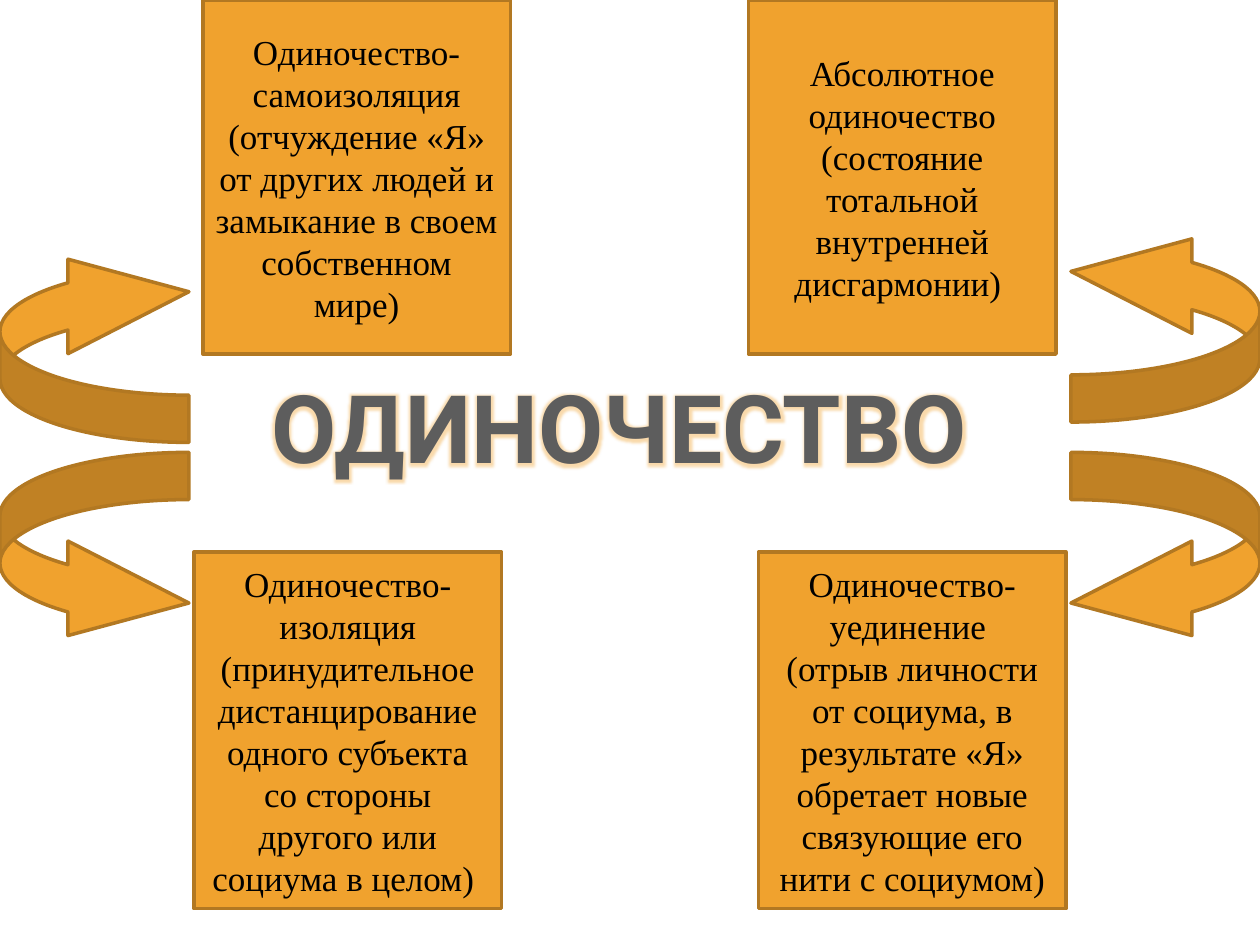
import pptx
import pptx.util
import pptx.dml.color
import pptx.enum.shapes
import pptx.enum.text
import pptx.oxml
import pptx.oxml.ns

Cm = pptx.util.Cm
Pt = pptx.util.Pt

TITLE = "ОДИНОЧЕСТВО"
COLORS = {"fill": "F0A22E", "line": "B27822", "text": "000000",
          "title": "5D5D5D", "glow": "F0A22E"}
FONTS = {"title": "Roboto", "body": "Times New Roman"}

BOX_W = 6.2
ARROW_W, ARROW_H = 3.81, 3.99
SLIDE_W, SLIDE_H = 25.4, 19.05

BOXES = [
    (3.91, 11.13, 7.19, ["Одиночество-изоляция",
                         "(принудительное дистанцирование одного субъекта "
                         "со стороны другого или социума в целом) "]),
    (15.29, 11.13, 7.19, ["Одиночество-уединение ",
                          "(отрыв личности от социума, в результате «Я» "
                          "обретает новые связующие его нити с социумом)"]),
    (4.09, 0, 7.14, ["Одиночество-самоизоляция (отчуждение «Я» от других "
                     "людей и замыкание в своем собственном мире)"]),
    (15.09, 0, 7.14, ["Абсолютное одиночество (состояние тотальной "
                      "внутренней дисгармонии) "]),
]
ARROWS = [
    ("right", 9.12, False),
    ("left", 9.12, False),
    ("right", 4.52, True),
    ("left", 4.93, True),
]


def rgb(name):
    return pptx.dml.color.RGBColor.from_string(COLORS[name])


def add_run(p, text, font, size, color):
    p.alignment = pptx.enum.text.PP_ALIGN.CENTER
    r = p.add_run()
    r.text = text
    r.font.name = FONTS[font]
    r.font.size = Pt(size)
    r.font.color.rgb = rgb(color)
    return r


def add_shape(s, kind, left, top, width, height):
    sp = s.shapes.add_shape(kind, Cm(left), Cm(top), Cm(width), Cm(height))
    sp.shadow.inherit = False
    sp.fill.solid()
    sp.fill.fore_color.rgb = rgb("fill")
    sp.line.color.rgb = rgb("line")
    sp.line.width = Pt(2)
    return sp


def add_title(s):
    sp = s.shapes.title
    sp.left, sp.top, sp.width, sp.height = Cm(4.98), Cm(7.32), Cm(15), Cm(3.99)
    tf = sp.text_frame
    tf.auto_size = pptx.enum.text.MSO_AUTO_SIZE.NONE
    tf.word_wrap = False
    tf.vertical_anchor = pptx.enum.text.MSO_ANCHOR.TOP
    r = add_run(tf.paragraphs[0], TITLE, "title", 54, "title")
    r.font.bold = True
    glow = pptx.oxml.parse_xml(
        f'<a:effectLst {pptx.oxml.ns.nsdecls("a")}><a:glow rad="63500">'
        f'<a:srgbClr val="{COLORS["glow"]}"><a:alpha val="40000"/></a:srgbClr>'
        '</a:glow></a:effectLst>')
    r.font._element.find(pptx.oxml.ns.qn("a:solidFill")).addnext(glow)


def add_box(s, left, top, height, paragraphs):
    sp = add_shape(s, pptx.enum.shapes.MSO_SHAPE.RECTANGLE, left, top, BOX_W, height)
    tf = sp.text_frame
    tf.word_wrap = True
    tf.vertical_anchor = pptx.enum.text.MSO_ANCHOR.MIDDLE
    for i, text in enumerate(paragraphs):
        p = tf.add_paragraph() if i else tf.paragraphs[0]
        add_run(p, text, "body", 20, "text")


def add_arrow(s, side, top, flip_v):
    left = 0 if side == "left" else SLIDE_W - ARROW_W
    sp = add_shape(s, pptx.enum.shapes.MSO_SHAPE.CURVED_LEFT_ARROW,
                   left, top, ARROW_W, ARROW_H)
    for i, value in enumerate((0.25, 0.5, 0.64)):
        sp.adjustments[i] = value
    xfrm = sp._element.spPr.xfrm
    if side == "left":
        xfrm.set("flipH", "1")
    if flip_v:
        xfrm.set("flipV", "1")


def main():
    prs = pptx.Presentation()
    prs.slide_width, prs.slide_height = Cm(SLIDE_W), Cm(SLIDE_H)
    s = prs.slides.add_slide(prs.slide_layouts[5])
    add_title(s)
    for arrow in ARROWS:
        add_arrow(s, *arrow)
    for box in BOXES:
        add_box(s, *box)
    prs.save("out.pptx")


if __name__ == "__main__":
    main()
